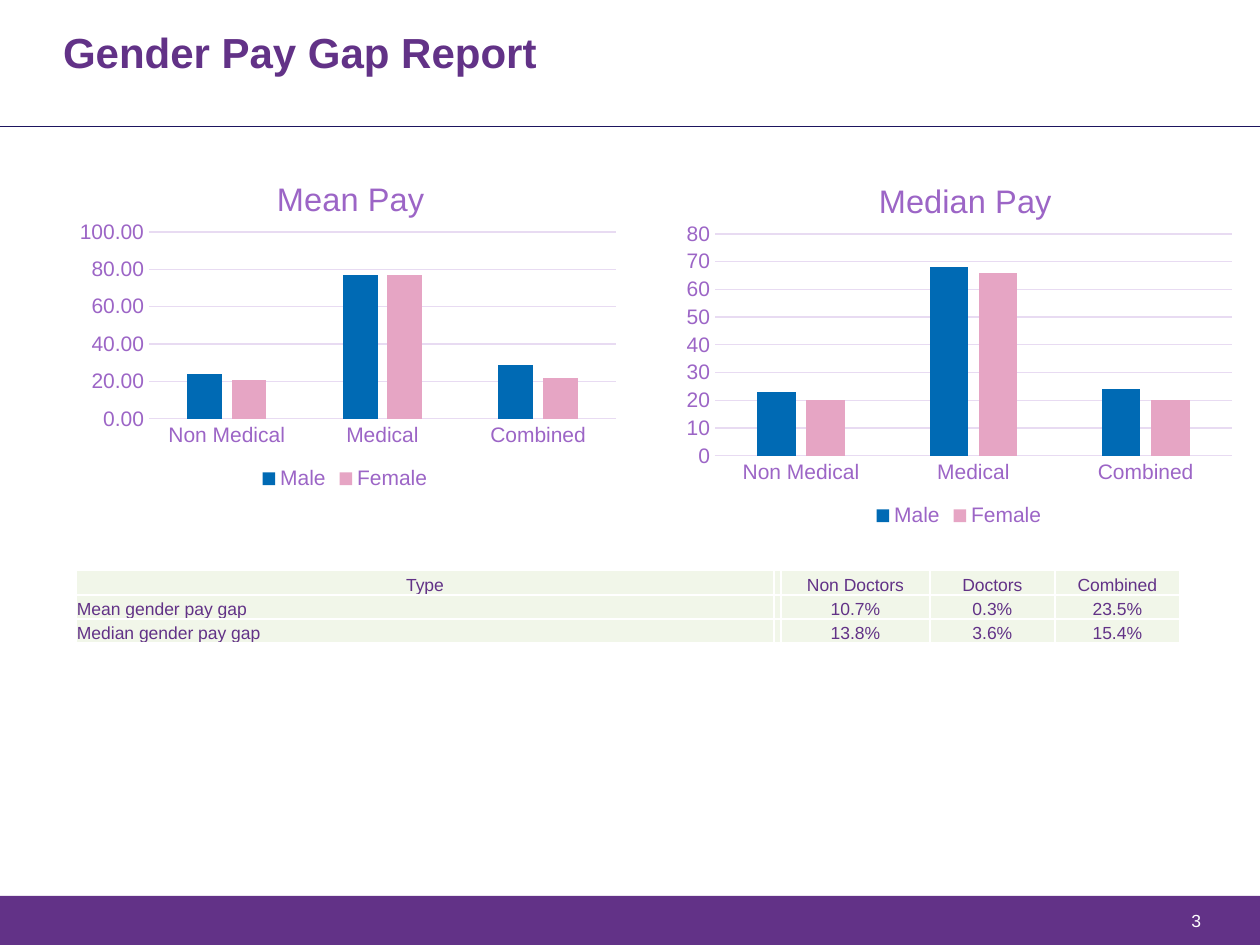
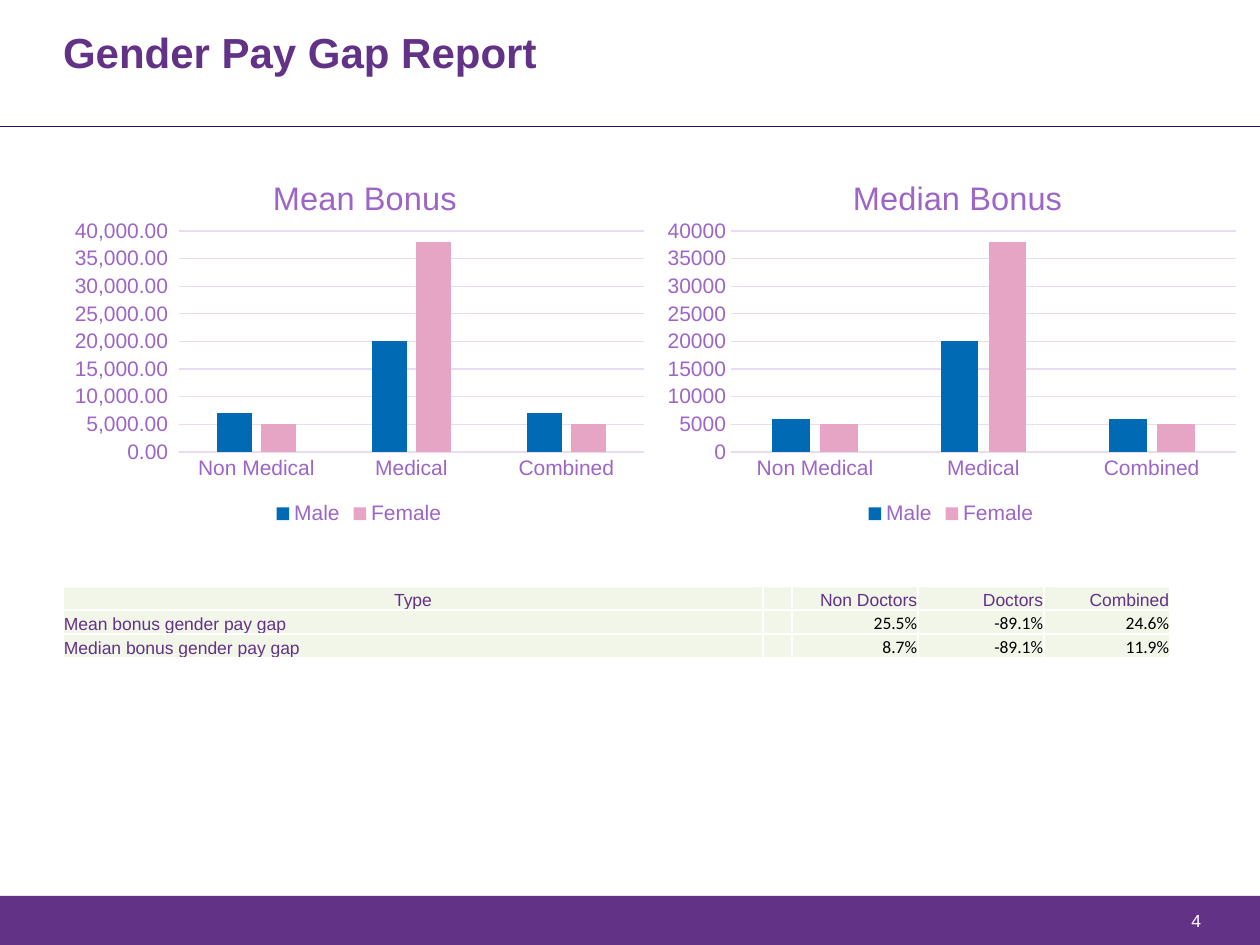
from lxml import etree
from pptx import Presentation
from pptx.chart.data import CategoryChartData
from pptx.dml.color import RGBColor
from pptx.enum.chart import XL_CHART_TYPE, XL_LEGEND_POSITION, XL_TICK_MARK
from pptx.enum.shapes import MSO_CONNECTOR, MSO_SHAPE
from pptx.enum.text import MSO_ANCHOR, PP_ALIGN
from pptx.oxml.ns import qn
from pptx.util import Pt

COLUMNS = XL_CHART_TYPE.COLUMN_CLUSTERED
LEGEND_BOTTOM = XL_LEGEND_POSITION.BOTTOM
NO_TICK = XL_TICK_MARK.NONE
STRAIGHT = MSO_CONNECTOR.STRAIGHT
RECTANGLE = MSO_SHAPE.RECTANGLE
TOP, MIDDLE, BOTTOM = MSO_ANCHOR.TOP, MSO_ANCHOR.MIDDLE, MSO_ANCHOR.BOTTOM
LEFT, CENTER, RIGHT = PP_ALIGN.LEFT, PP_ALIGN.CENTER, PP_ALIGN.RIGHT

EMU_PER_PX = 914400 / 126
SLIDE_WIDTH, SLIDE_HEIGHT = 1260, 945
BAND_TOP = 896
FONT = "Arial"
NUMBER_FONT = "Calibri"
COLORS = {
    "purple": "623287",
    "lilac": "9C65C6",
    "grid": "E8DBF2",
    "rule": "1D155F",
    "male": "006AB4",
    "female": "E6A5C4",
    "cell": "F1F6E9",
    "white": "FFFFFF",
    "black": "000000",
}
STAFF_GROUPS = ("Non Medical", "Medical", "Combined")
TABLE_HEADER = ("Type", "", "Non Doctors", "Doctors", "Combined")


def px(length):
    return round(length * EMU_PER_PX)


def box(*lengths):
    return [px(length) for length in lengths]


def color(name):
    return RGBColor.from_string(COLORS[name])


def style_font(font, size, color_name, name=FONT, bold=False):
    font.size = Pt(size)
    font.name = name
    font.bold = bold
    font.color.rgb = color(color_name)


def style_line(line, color_name, width):
    line.color.rgb = color(color_name)
    line.width = Pt(width)


def add_text(slide, area, text, size, color_name, alignment, anchor, bold=False):
    text_frame = slide.shapes.add_textbox(*box(*area)).text_frame
    text_frame.word_wrap = True
    text_frame.vertical_anchor = anchor
    text_frame.margin_left = text_frame.margin_right = 0
    text_frame.margin_top = text_frame.margin_bottom = 0
    text_frame.text = text
    paragraph = text_frame.paragraphs[0]
    paragraph.alignment = alignment
    style_font(paragraph.runs[0].font, size, color_name, bold=bold)
    return paragraph


def add_report_slide(presentation, page_number):
    slide = presentation.slides.add_slide(presentation.slide_layouts[6])
    band = slide.shapes.add_shape(
        RECTANGLE, *box(0, BAND_TOP, SLIDE_WIDTH, SLIDE_HEIGHT - BAND_TOP))
    band.shadow.inherit = False
    band.fill.solid()
    band.fill.fore_color.rgb = color("purple")
    band.line.fill.background()
    rule = slide.shapes.add_connector(STRAIGHT, *box(0, 126, SLIDE_WIDTH, 126))
    style_line(rule.line, "rule", 0.25)
    etree.SubElement(rule.element.spPr, qn("a:effectLst"))
    add_text(slide, (1167, 910, 34, 29), str(page_number), 10, "white", RIGHT, TOP)
    title = add_text(slide, (63, 33, 495, 43), "Gender Pay Gap Report", 24,
                     "purple", LEFT, MIDDLE, bold=True)
    title.line_spacing = 0.9
    return slide


def set_layout(element, index, settings):
    for layout in element.findall(qn("c:layout")):
        element.remove(layout)
    layout = etree.Element(qn("c:layout"))
    manual = etree.SubElement(layout, qn("c:manualLayout"))
    for tag, value in settings.items():
        etree.SubElement(manual, qn("c:" + tag)).set("val", str(value))
    element.insert(index, layout)


def fractions(area, left, top):
    return {
        "xMode": "edge",
        "yMode": "edge",
        "x": round((left - area[0]) / area[2], 4),
        "y": round((top - area[1]) / area[3], 4),
    }


def style_axes(chart, maximum, step, number_format):
    category_axis, value_axis = chart.category_axis, chart.value_axis
    for axis in (category_axis, value_axis):
        axis.major_tick_mark = axis.minor_tick_mark = NO_TICK
        style_font(axis.tick_labels.font, 12, "lilac")
    style_line(category_axis.format.line, "grid", 0.75)
    value_axis.format.line.fill.background()
    style_line(value_axis.major_gridlines.format.line, "grid", 0.75)
    value_axis.minimum_scale = 0
    value_axis.maximum_scale = maximum
    value_axis.major_unit = step
    value_axis.tick_labels.number_format = number_format
    value_axis.tick_labels.number_format_is_linked = False


def add_column_chart(slide, area, title, title_corner, plot_area, male, female,
                     maximum, step, number_format="General"):
    chart_data = CategoryChartData()
    chart_data.categories = STAFF_GROUPS
    chart_data.add_series("Male", male)
    chart_data.add_series("Female", female)
    chart = slide.shapes.add_chart(COLUMNS, *box(*area), chart_data).chart
    style_font(chart.font, 10, "purple")

    chart.has_title = True
    title_frame = chart.chart_title.text_frame
    title_frame.text = title
    style_font(title_frame.paragraphs[0].runs[0].font, 18.6, "lilac")
    set_layout(chart.chart_title.element, 1, fractions(area, *title_corner))

    left, top, width, height = plot_area
    plot_layout = {"layoutTarget": "inner", **fractions(area, left, top),
                   "w": round(width / area[2], 4), "h": round(height / area[3], 4)}
    set_layout(chart.element.find(".//" + qn("c:plotArea")), 0, plot_layout)

    chart.has_legend = True
    chart.legend.position = LEGEND_BOTTOM
    chart.legend.include_in_layout = False
    style_font(chart.legend.font, 12, "lilac")

    style_axes(chart, maximum, step, number_format)
    plot = chart.plots[0]
    plot.vary_by_categories = False
    plot.gap_width = 219
    plot.overlap = -27
    for series, color_name in zip(plot.series, ("male", "female")):
        series.format.fill.solid()
        series.format.fill.fore_color.rgb = color(color_name)


def style_cell(cell, text, alignment, font_name, color_name):
    cell.fill.solid()
    cell.fill.fore_color.rgb = color("cell")
    cell.vertical_anchor = BOTTOM
    cell.margin_left = cell.margin_right = cell.margin_top = px(1)
    cell.margin_bottom = 0
    properties = cell._tc.get_or_add_tcPr()
    for index, side in enumerate(("lnL", "lnR", "lnT", "lnB")):
        border = etree.Element(qn("a:" + side), w=str(Pt(1)))
        fill = etree.SubElement(border, qn("a:solidFill"))
        etree.SubElement(fill, qn("a:srgbClr"), val=COLORS["white"])
        properties.insert(index, border)
    paragraph = cell.text_frame.paragraphs[0]
    if text:
        paragraph.text = text
        paragraph.alignment = alignment
        style_font(paragraph.runs[0].font, 10, color_name, font_name)
    else:
        etree.SubElement(paragraph._p, qn("a:endParaRPr"), sz="1000")


def add_gap_table(slide, left, top, widths, heights, rows, alignment,
                  number_font=FONT, number_color="purple"):
    area = box(left, top, sum(widths), sum(heights))
    table = slide.shapes.add_table(len(heights), len(widths), *area).table
    table.first_row = table.horz_banding = False
    for column, width in zip(table.columns, widths):
        column.width = px(width)
    for row, height in zip(table.rows, heights):
        row.height = px(height)
    for row_index, texts in enumerate((TABLE_HEADER, *rows)):
        for column_index, text in enumerate(texts):
            is_number = row_index > 0 and column_index > 0
            if column_index == 0:
                cell_alignment = LEFT if row_index else CENTER
            else:
                cell_alignment = alignment
            style_cell(table.cell(row_index, column_index), text, cell_alignment,
                       number_font if is_number else FONT,
                       number_color if is_number else "purple")


def add_pay_slide(presentation):
    slide = add_report_slide(presentation, 3)
    add_column_chart(slide, (63, 151, 564, 344), "Mean Pay", (271, 171),
                     (149, 232, 467, 187), (24, 77, 29), (21, 77, 22),
                     100, 20, "#,##0.00;[Red]#,##0.00")
    add_column_chart(slide, (675, 151, 568, 381), "Median Pay", (873, 173),
                     (715, 234, 517, 222), (23, 68, 24), (20, 66, 20), 80, 10)
    rows = (
        ("Mean gender pay gap", "", "10.7%", "0.3%", "23.5%"),
        ("Median gender pay gap", "", "13.8%", "3.6%", "15.4%"),
    )
    add_gap_table(slide, 76, 570, (698, 5, 149, 125, 125), (25, 24, 24), rows, CENTER)


def add_bonus_slide(presentation):
    slide = add_report_slide(presentation, 4)
    add_column_chart(slide, (63, 149, 592, 381), "Mean Bonus", (267, 170),
                     (179, 231, 465, 221), (7000, 20000, 7000), (5000, 38000, 5000),
                     40000, 5000, r"#,##0.00\ ;[Red]\(#,##0.00\)")
    add_column_chart(slide, (655, 149, 592, 381), "Median Bonus", (847, 170),
                     (731, 231, 505, 221), (6000, 20000, 6000), (5000, 38000, 5000),
                     40000, 5000)
    rows = (
        ("Mean bonus gender pay gap", "", "25.5%", "-89.1%", "24.6%"),
        ("Median bonus gender pay gap", "", "8.7%", "-89.1%", "11.9%"),
    )
    add_gap_table(slide, 63, 586, (700, 29, 126, 126, 126), (24, 24, 24), rows,
                  RIGHT, NUMBER_FONT, "black")


def main():
    presentation = Presentation()
    presentation.slide_width = px(SLIDE_WIDTH)
    presentation.slide_height = px(SLIDE_HEIGHT)
    add_pay_slide(presentation)
    add_bonus_slide(presentation)
    presentation.save("out.pptx")


if __name__ == "__main__":
    main()
